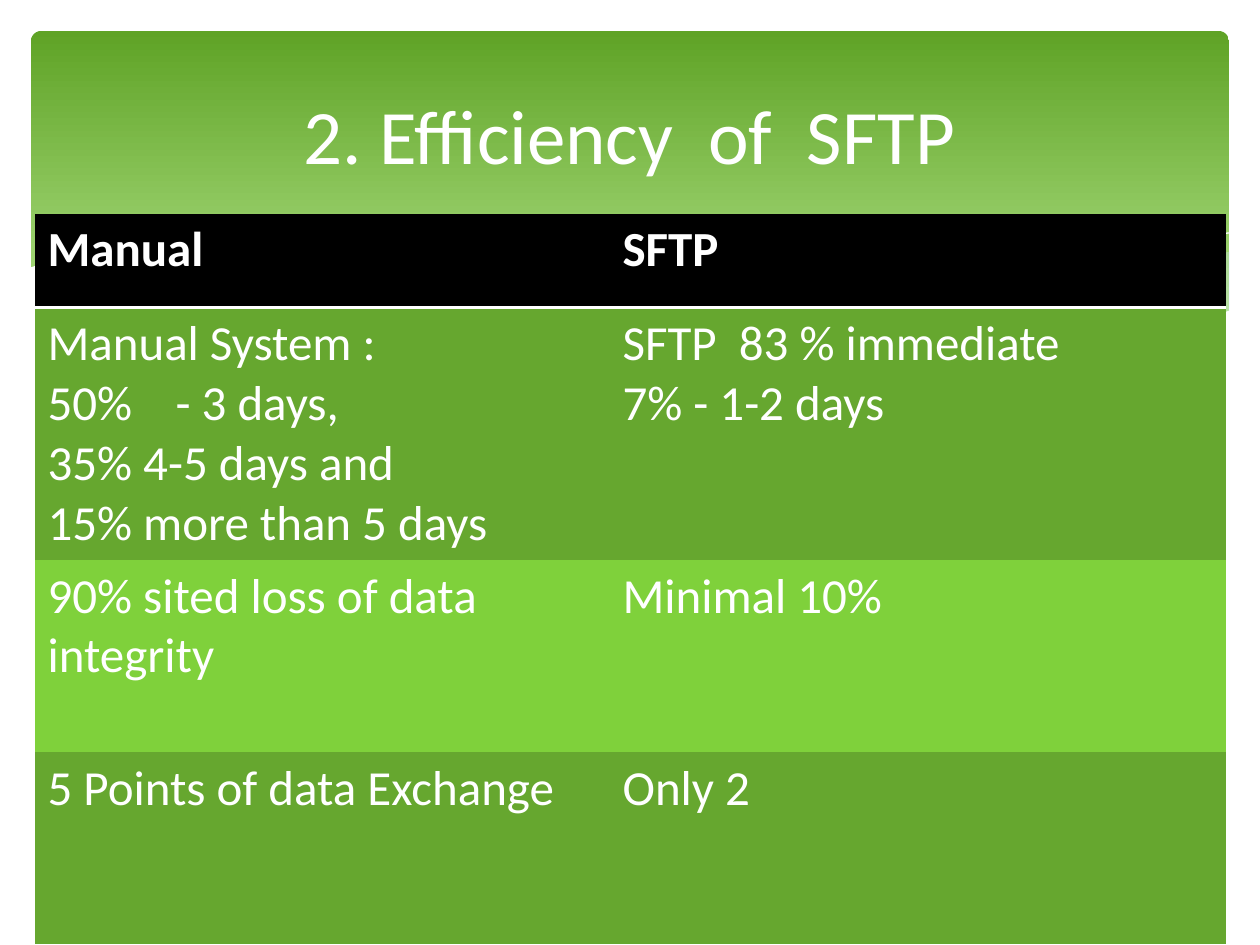
from lxml import etree
from pptx import Presentation
from pptx.dml.color import RGBColor
from pptx.enum.shapes import MSO_SHAPE
from pptx.enum.text import MSO_ANCHOR, PP_ALIGN
from pptx.oxml.ns import qn
from pptx.util import Emu, Pt

ROUNDED = MSO_SHAPE.ROUNDED_RECTANGLE
MIDDLE = MSO_ANCHOR.MIDDLE
CENTER = PP_ALIGN.CENTER

WHITE = RGBColor(0xFF, 0xFF, 0xFF)
BLACK = RGBColor(0x00, 0x00, 0x00)
DEEP_GREEN = RGBColor(0x5F, 0xA3, 0x26)
PALE_GREEN = RGBColor(0xB2, 0xE3, 0x89)
ROW_GREEN = RGBColor(0x66, 0xA7, 0x2F)
BRIGHT_GREEN = RGBColor(0x7F, 0xD1, 0x3B)
MIST = RGBColor(0xD6, 0xEC, 0xFF)

PX = 914400 / 126
FONT = "Calibri"
NO_GRID = "{2D5ABB26-0587-4C30-8999-92F81FD0307C}"

RIGHT_WAVE = [
    (1229, 252), (1194, 257), (1142, 268), (1085, 281), (1014, 298), (949, 312),
    (890, 324), (833, 334), (888, 341), (954, 347), (1025, 350), (1087, 347),
    (1140, 340), (1187, 328), (1230, 311), (1230, 252),
]
MIDDLE_WAVE = [
    (1125, 344), (1055, 334), (977, 320), (890, 302), (793, 280), (736, 266),
    (682, 255), (616, 244), (529, 236), (455, 233), (394, 237), (360, 241),
    (431, 251), (509, 266), (566, 280), (668, 302), (757, 321), (838, 335),
    (910, 345), (989, 350), (1068, 349),
]
LONG_CURVE = [
    (389, 246), (441, 238), (505, 235), (591, 238), (672, 244), (766, 257),
    (876, 276), (958, 294), (1047, 316), (1143, 343),
]
SHORT_CURVE = [
    (772, 324), (847, 304), (942, 281), (1053, 257), (1128, 244), (1198, 236),
    (1229, 233),
]
WHITE_WAVE = [
    (1231, 310), (1184, 326), (1133, 339), (1071, 346), (1019, 349), (937, 346),
    (867, 338), (788, 325), (699, 309), (599, 286), (527, 268), (460, 254),
    (368, 239), (290, 233), (203, 232), (134, 241), (84, 251), (50, 261),
    (29, 268), (29, 415), (1231, 415),
]

ROWS = [
    (94, BLACK, ["Manual"], ["SFTP"]),
    (252, ROW_GREEN,
     ["Manual System :", "50%\t- 3 days,", "35% 4-5 days and", "15% more than 5 days"],
     ["SFTP  83 % immediate", "7% - 1-2 days"]),
    (192, BRIGHT_GREEN, ["90% sited loss of data integrity"], ["Minimal 10%"]),
    (192, ROW_GREEN, ["5 Points of data Exchange"], ["Only 2"]),
]


def px(length):
    """Turn px into EMU."""
    return Emu(round(length * PX))


class SlideBuilder:
    """Holds the text style and the current slide."""

    def __init__(self, slide, font, color):
        self.slide = slide
        self.font = font
        self.color = color

    def style(self, para, size, bold=False):
        """Format every run of a paragraph."""
        for span in para.runs:
            span.font.name = self.font
            span.font.size = Pt(size)
            span.font.bold = bold
            span.font.color.rgb = self.color

    def banner(self, left, top, width, height):
        """Draw the rounded gradient banner."""
        box = self.slide.shapes.add_shape(ROUNDED, px(left), px(top), px(width), px(height))
        box.adjustments[0] = 0.03
        box.shadow.inherit = False
        box.line.fill.background()
        box.fill.gradient()
        box.fill.gradient_angle = 270
        stops = zip(box.fill.gradient_stops, (DEEP_GREEN, PALE_GREEN), (0, 0.9))
        for stop, color, position in stops:
            stop.color.rgb = color
            stop.position = position

    def outline(self, points, close):
        """Draw a bare outline through the points."""
        builder = self.slide.shapes.build_freeform(*points[0], scale=PX)
        builder.add_line_segments(points[1:], close=close)
        shape = builder.convert_to_shape()
        shape.shadow.inherit = False
        return shape

    def wave(self, points, color, opacity=100):
        """Draw a filled wave."""
        shape = self.outline(points, True)
        shape.line.fill.background()
        shape.fill.solid()
        shape.fill.fore_color.rgb = color
        if opacity < 100:
            tone = shape.fill._xPr.find(qn("a:solidFill"))[0]
            etree.SubElement(tone, qn("a:alpha"), val=str(opacity * 1000))

    def curve(self, points, color):
        """Draw an open hairline curve."""
        shape = self.outline(points, False)
        shape.fill.background()
        shape.line.color.rgb = color
        shape.line.width = Pt(0)

    def title(self, text, left, top, width, height):
        """Fill the title placeholder and bring it to the front."""
        box = self.slide.shapes.title
        box.left, box.top, box.width, box.height = map(px, (left, top, width, height))
        frame = box.text_frame
        frame.text = text
        frame.vertical_anchor = MIDDLE
        frame.paragraphs[0].alignment = CENTER
        self.style(frame.paragraphs[0], 44)
        self.slide.shapes._spTree.append(box._element)

    def cell(self, cell, lines, fill, header):
        """Fill one table cell."""
        cell.fill.solid()
        cell.fill.fore_color.rgb = fill
        frame = cell.text_frame
        frame.text = "\n".join(lines)
        for para in frame.paragraphs:
            if "\t" in para.text:
                tabs = etree.SubElement(para._p.get_or_add_pPr(), qn("a:tabLst"))
                etree.SubElement(tabs, qn("a:tab"), pos=str(px(128)), algn="l")
            self.style(para, 28, header)
        if header:
            border = etree.Element(qn("a:lnB"), w=str(Pt(2)))
            paint = etree.SubElement(border, qn("a:solidFill"))
            etree.SubElement(paint, qn("a:srgbClr"), val=str(WHITE))
            cell._tc.get_or_add_tcPr().insert(0, border)

    def table(self, rows, left, top, widths):
        """Draw the comparison table."""
        height = sum(row[0] for row in rows)
        frame = self.slide.shapes.add_table(
            len(rows), len(widths), px(left), px(top), px(sum(widths)), px(height))
        table = frame.table
        table.horz_banding = False
        table._tbl.tblPr.find(qn("a:tableStyleId")).text = NO_GRID
        for column, width in zip(table.columns, widths):
            column.width = px(width)
        for index, (row_height, fill, *texts) in enumerate(rows):
            table.rows[index].height = px(row_height)
            for position, lines in enumerate(texts):
                self.cell(table.cell(index, position), lines, fill, index == 0)


def main():
    """Build the slide and save it."""
    deck = Presentation()
    deck.slide_width, deck.slide_height = px(1260), px(945)
    page = SlideBuilder(deck.slides.add_slide(deck.slide_layouts[5]), FONT, WHITE)
    page.banner(31, 31, 1198, 340)
    page.wave(RIGHT_WAVE, MIST, 29)
    page.wave(MIDDLE_WAVE, MIST, 40)
    page.curve(LONG_CURVE, WHITE)
    page.curve(SHORT_CURVE, WHITE)
    page.wave(WHITE_WAVE, WHITE)
    page.title("2. Efficiency  of  SFTP", 63, 47, 1134, 173)
    page.table(ROWS, 35, 214, (575, 616))
    deck.save("out.pptx")


if __name__ == "__main__":
    main()
